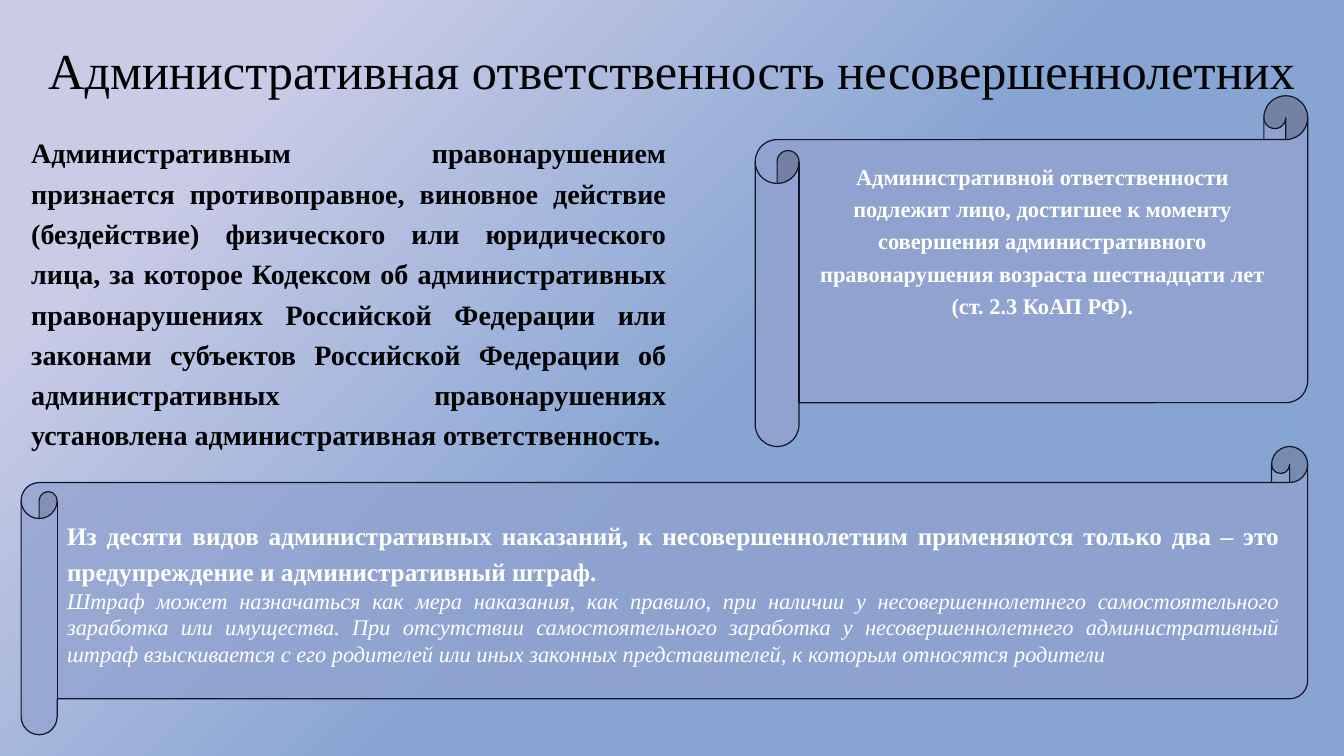
from lxml import etree
from pptx import Presentation
from pptx.dml.color import RGBColor
from pptx.enum.shapes import MSO_SHAPE
from pptx.enum.text import MSO_ANCHOR, MSO_AUTO_SIZE, PP_ALIGN
from pptx.oxml import parse_xml
from pptx.oxml.ns import qn
from pptx.util import Inches, Pt

SCROLL = MSO_SHAPE.HORIZONTAL_SCROLL
TOP, MIDDLE = MSO_ANCHOR.TOP, MSO_ANCHOR.MIDDLE
CENTER, JUSTIFY = PP_ALIGN.CENTER, PP_ALIGN.JUSTIFY
NO_AUTOFIT = MSO_AUTO_SIZE.NONE

BLACK = RGBColor(0x00, 0x00, 0x00)
WHITE = RGBColor(0xFF, 0xFF, 0xFF)
SCROLL_FILL = RGBColor(0x90, 0xA2, 0xCF)
SCROLL_LINE = RGBColor(0x12, 0x14, 0x29)
BLUE = RGBColor(0x86, 0xA5, 0xD2)
LAVENDER = RGBColor(0xC9, 0xCB, 0xE7)

FONT = "Times New Roman"
WIDTH, HEIGHT = 13.33, 7.5
MARGIN = 0.21
SCROLL_RIGHT = 12.97
SCROLL_SPLIT = 4.43

TITLE = "Административная ответственность несовершеннолетних"
DEFINITION = (
    "Административным правонарушением признается противоправное, виновное действие "
    "(бездействие) физического или юридического лица, за которое Кодексом об "
    "административных правонарушениях Российской Федерации или законами субъектов "
    "Российской Федерации об административных правонарушениях установлена "
    "административная ответственность."
)
AGE_RULE = (
    "Административной ответственности подлежит лицо, достигшее к моменту совершения "
    "административного правонарушения возраста шестнадцати лет (ст. 2.3 КоАП РФ)."
)
PENALTIES = (
    "Из десяти видов административных наказаний, к несовершеннолетним применяются "
    "только два – это предупреждение и административный штраф."
)
FINE_NOTE = (
    "Штраф может назначаться как мера наказания, как правило, при наличии у "
    "несовершеннолетнего самостоятельного заработка или имущества. При отсутствии "
    "самостоятельного заработка у несовершеннолетнего административный штраф "
    "взыскивается с его родителей или иных законных представителей, к которым "
    "относятся родители"
)


def place(shape, box):
    """Move a shape to a box of left, top, width and height in inches."""
    shape.left, shape.top, shape.width, shape.height = map(Inches, box)


def write(paragraph, text, size, color, align, spacing=1.2, bold=False, italic=False):
    """Fill one paragraph with text in a single format."""
    paragraph.text = text
    paragraph.alignment = align
    paragraph.line_spacing = spacing
    paragraph.space_before = Pt(0)
    font = paragraph.font
    font.name, font.size, font.bold, font.italic = FONT, Pt(size), bold, italic
    font.color.rgb = color


def paint_background(slide):
    """Spread a round gradient from the lower right corner."""
    fill = slide.background.fill
    fill.gradient()
    gradient = slide.background._cSld.find(".//" + qn("a:gradFill"))
    radial = parse_xml(
        '<a:gradFill xmlns:a="http://schemas.openxmlformats.org/drawingml/2006/main" '
        'rotWithShape="1"><a:gsLst>'
        f'<a:gs pos="46000"><a:srgbClr val="{BLUE}"/></a:gs>'
        f'<a:gs pos="83000"><a:srgbClr val="{LAVENDER}"/></a:gs></a:gsLst>'
        '<a:path path="circle"><a:fillToRect l="100000" t="100000"/></a:path>'
        "</a:gradFill>"
    )
    gradient.getparent().replace(gradient, radial)


def add_title(slide, box):
    """Set the heading in the title placeholder."""
    title = slide.shapes.title
    place(title, box)
    frame = title.text_frame
    frame.auto_size, frame.vertical_anchor = NO_AUTOFIT, MIDDLE
    write(frame.paragraphs[0], TITLE, 36, BLACK, CENTER, spacing=0.9)


def add_definition(slide, box):
    """Set the definition in the body placeholder without a bullet."""
    body = slide.placeholders[1]
    place(body, box)
    frame = body.text_frame
    frame.auto_size, frame.vertical_anchor = NO_AUTOFIT, TOP
    paragraph = frame.paragraphs[0]
    write(paragraph, DEFINITION, 20, BLACK, JUSTIFY, bold=True)
    properties = paragraph._p.get_or_add_pPr()
    properties.set("marL", "0")
    properties.set("indent", "0")
    bullet = etree.SubElement(properties, qn("a:buNone"))
    properties.find(qn("a:defRPr")).addprevious(bullet)


def add_scroll(slide, box, opacity=100):
    """Add an outlined scroll and return its text frame."""
    scroll = slide.shapes.add_shape(SCROLL, *map(Inches, box))
    scroll.shadow.inherit = False
    scroll.fill.solid()
    scroll.fill.fore_color.rgb = SCROLL_FILL
    if opacity < 100:
        color = scroll._element.spPr.find(qn("a:solidFill")).find(qn("a:srgbClr"))
        etree.SubElement(color, qn("a:alpha")).set("val", str(opacity * 1000))
    scroll.line.color.rgb = SCROLL_LINE
    scroll.line.width = Pt(0.85)
    frame = scroll.text_frame
    frame.word_wrap, frame.vertical_anchor = True, MIDDLE
    return frame


def add_penalties(slide, box):
    """Add the wide scroll about the two penalties."""
    frame = add_scroll(slide, box, opacity=75)
    write(frame.paragraphs[0], PENALTIES, 18, WHITE, JUSTIFY, bold=True)
    write(frame.add_paragraph(), FINE_NOTE, 16, WHITE, JUSTIFY, spacing=1.0, italic=True)


def add_age_rule(slide, box):
    """Add the scroll about the age of liability, its text raised."""
    frame = add_scroll(slide, box)
    frame.margin_bottom = Inches(0.7)
    write(frame.paragraphs[0], AGE_RULE, 16, WHITE, CENTER, bold=True)


def main():
    """Build the slide and save it."""
    presentation = Presentation()
    presentation.slide_width, presentation.slide_height = Inches(WIDTH), Inches(HEIGHT)
    slide = presentation.slides.add_slide(presentation.slide_layouts[1])
    paint_background(slide)
    add_title(slide, (0, 0, WIDTH, 1.45))
    add_definition(slide, (MARGIN, 1.23, 6.5, 4.1))
    add_penalties(slide, (MARGIN, SCROLL_SPLIT, SCROLL_RIGHT - MARGIN, 2.86))
    add_age_rule(slide, (7.49, 0.95, SCROLL_RIGHT - 7.49, SCROLL_SPLIT - 0.95))
    presentation.save("out.pptx")


if __name__ == "__main__":
    main()
